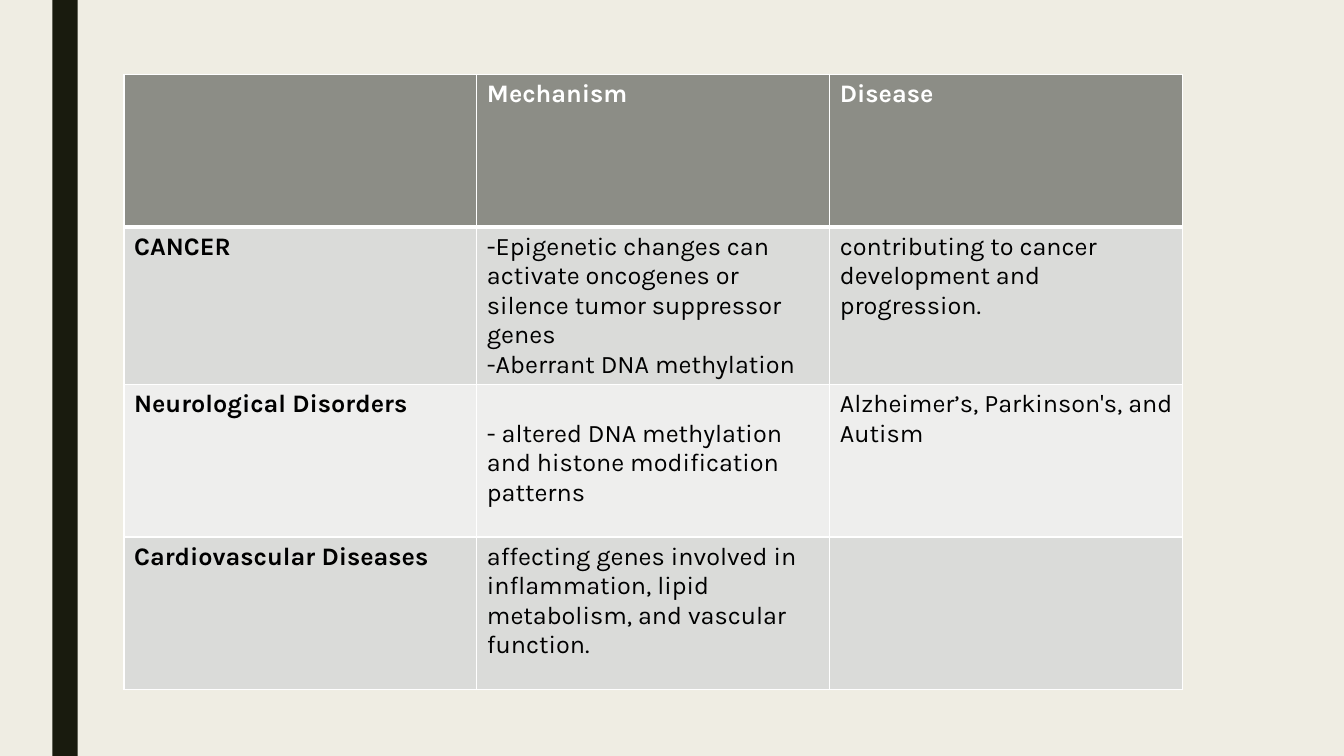
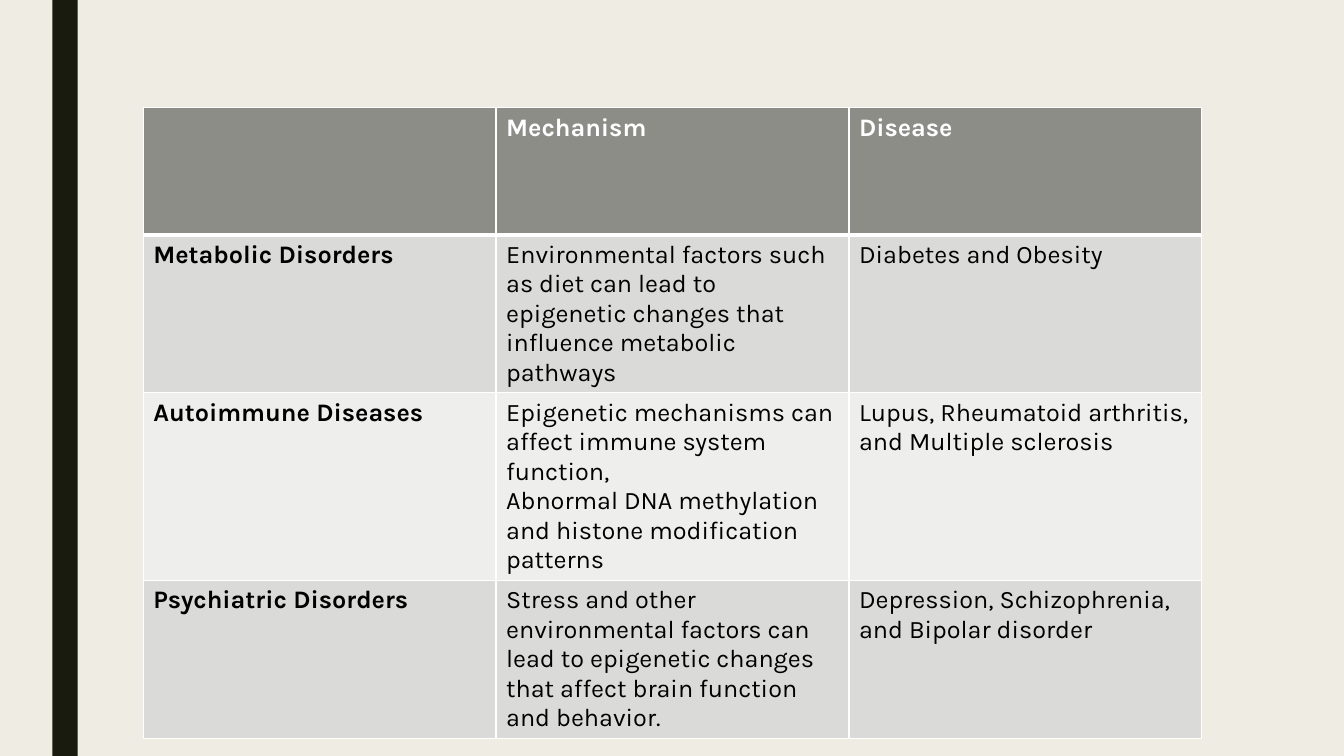
from lxml.etree import SubElement
from pptx import Presentation
from pptx.dml.color import RGBColor
from pptx.enum.shapes import MSO_SHAPE as Shape
from pptx.oxml.ns import qn
from pptx.util import Pt

PX = 9144  # EMU, a hundredth of an inch
WIDE, HIGH = 1333, 750

CREAM = RGBColor(0xEF, 0xED, 0xE3)
DARK = RGBColor(0x19, 0x1B, 0x0E)
GRAY = RGBColor(0x8C, 0x8D, 0x86)
BANDS = RGBColor(0xDA, 0xDB, 0xD9), RGBColor(0xEE, 0xEE, 0xED)
WHITE = RGBColor(0xFF, 0xFF, 0xFF)
BLACK = RGBColor(0, 0, 0)

FONT, SIZE = "Karla", Pt(18)
COL, LINE = 350, 29
HEAD = ("", "Mechanism", "Disease")


class Deck:
    def __init__(self):
        self.prs = Presentation()
        self.prs.slide_width = WIDE * PX
        self.prs.slide_height = HIGH * PX
        self.slide = None

    def page(self):
        self.slide = self.prs.slides.add_slide(self.prs.slide_layouts[6])
        fill = self.slide.background.fill
        fill.solid()
        fill.fore_color.rgb = CREAM
        self.bar(52, 0, 25, HIGH, DARK)

    def bar(self, x, y, w, h, color):
        bar = self.slide.shapes.add_shape(
            Shape.RECTANGLE, x * PX, y * PX, w * PX, h * PX)
        bar.shadow.inherit = False
        bar.fill.solid()
        bar.fill.fore_color.rgb = color
        bar.line.fill.background()

    def table(self, x, y, high, rows):
        rows = [HEAD, *rows]
        table = self.slide.shapes.add_table(
            len(rows), len(HEAD), x * PX, y * PX,
            COL * len(HEAD) * PX, high * len(rows) * PX).table
        table.horz_banding = False
        for r, row in enumerate(rows):
            for c, text in enumerate(row):
                cell = table.cell(r, c)
                self.edge(cell, top=3 if r == 1 else 1, base=1 if r else 3)
                cell.fill.solid()
                cell.fill.fore_color.rgb = BANDS[(r - 1) % 2] if r else GRAY
                self.text(cell.text_frame, text, BLACK if r else WHITE,
                          r == 0 or c == 0)
        return table

    def edge(self, cell, top, base):
        """Draw white cell borders; the widths are in points."""
        props = cell._tc.get_or_add_tcPr()
        for side, width in zip("LRTB", (1, 1, top, base)):
            line = SubElement(props, qn(f"a:ln{side}"), w=str(Pt(width)))
            fill = SubElement(line, qn("a:solidFill"))
            SubElement(fill, qn("a:srgbClr"), val=str(WHITE))

    def text(self, frame, text, color, bold):
        frame.text = text
        for para in frame.paragraphs:
            para.font.size = SIZE
            for run in para.runs:
                font = run.font
                font.name, font.size, font.bold = FONT, SIZE, bold
                font.color.rgb = color


def main():
    deck = Deck()

    deck.page()
    table = deck.table(123, 74, 151, [
        ("CANCER",
         "-Epigenetic changes can activate oncogenes or silence tumor "
         "suppressor genes\n-Aberrant DNA methylation",
         "contributing to cancer development and progression."),
        ("Neurological Disorders",
         "- altered DNA methylation and histone modification patterns",
         "Alzheimer’s, Parkinson's, and Autism"),
        ("Cardiovascular Diseases",
         "affecting genes involved in inflammation, lipid metabolism, "
         "and vascular function.",
         ""),
    ])
    # The altered-methylation text starts one line lower
    table.cell(2, 1).margin_top = (5 + LINE) * PX

    deck.page()
    deck.table(142, 107, 126, [
        ("Metabolic Disorders",
         "Environmental factors such as diet can lead to epigenetic "
         "changes that influence metabolic pathways",
         "Diabetes and Obesity"),
        ("Autoimmune Diseases",
         "Epigenetic mechanisms can affect immune system function,\n"
         "Abnormal DNA methylation and histone modification patterns",
         "Lupus, Rheumatoid arthritis, and Multiple sclerosis"),
        ("Psychiatric Disorders",
         "Stress and other environmental factors can lead to epigenetic "
         "changes that affect brain function and behavior.",
         "Depression, Schizophrenia, and Bipolar disorder"),
    ])

    deck.prs.save("out.pptx")


if __name__ == "__main__":
    main()
